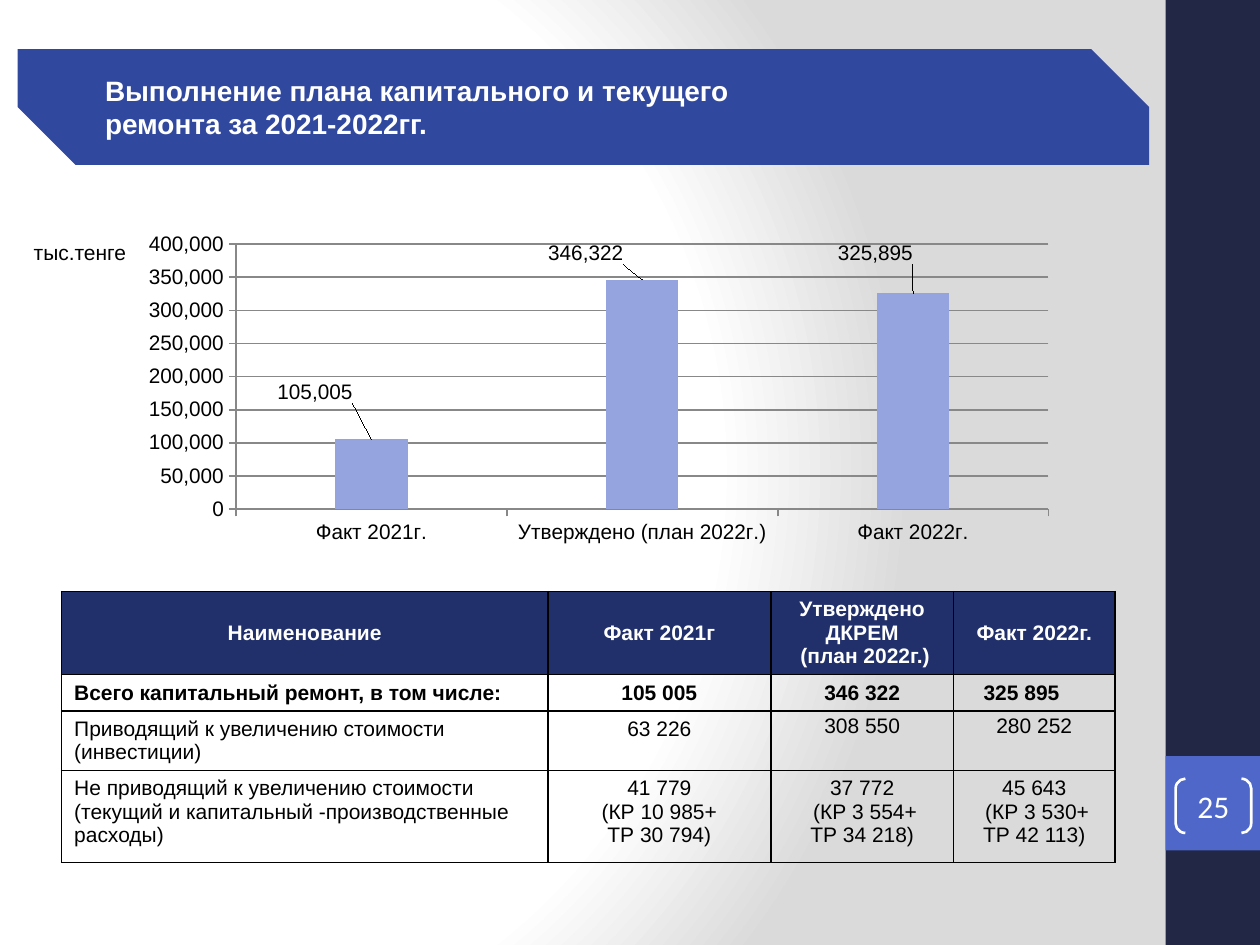
from dataclasses import dataclass

from lxml.etree import SubElement
from pptx import Presentation
from pptx.chart.data import CategoryChartData
from pptx.dml.color import RGBColor
from pptx.enum.chart import XL_CHART_TYPE as ChartType
from pptx.enum.chart import XL_LABEL_POSITION as LabelPosition
from pptx.enum.chart import XL_TICK_MARK as TickMark
from pptx.enum.shapes import MSO_SHAPE as Preset
from pptx.enum.text import MSO_ANCHOR as Anchor
from pptx.enum.text import MSO_AUTO_SIZE as AutoSize
from pptx.enum.text import PP_ALIGN as Align
from pptx.oxml import parse_xml
from pptx.oxml.ns import nsdecls, qn
from pptx.util import Pt

WHITE, BLACK, GREY = "FFFFFF", "000000", "888888"
NAVY, BLUE, BANNER, HEADER, BAR = "212745", "4E67C8", "31489F", "21306A", "95A4DE"


@dataclass
class Box:
    left: float
    top: float
    width: float
    height: float

    def lengths(self) -> tuple:
        return Pt(self.left), Pt(self.top), Pt(self.width), Pt(self.height)


@dataclass
class Style:
    size: float = 12
    color: str = BLACK
    bold: bool = False
    font: str = "Arial"
    align: Align = Align.LEFT


@dataclass
class Column:
    category: str
    value: int
    shift_x: float
    shift_y: float


def rgb(color: str) -> RGBColor:
    return RGBColor.from_string(color)


def write(frame, text: str, style: Style) -> None:
    """Fill a text frame, one paragraph for each line of text."""
    for index, line in enumerate(text.split("\n")):
        paragraph = frame.add_paragraph() if index else frame.paragraphs[0]
        paragraph.alignment = style.align
        run = paragraph.add_run()
        run.text = line
        set_font(run.font, style)


def set_font(font, style: Style) -> None:
    font.name, font.size, font.bold = style.font, Pt(style.size), style.bold
    font.color.rgb = rgb(style.color)


def set_margins(target, left: float, top: float, right: float, bottom: float) -> None:
    target.margin_left, target.margin_top = Pt(left), Pt(top)
    target.margin_right, target.margin_bottom = Pt(right), Pt(bottom)


def add_block(slide, preset: Preset, box: Box, fill: str):
    shape = slide.shapes.add_shape(preset, *box.lengths())
    shape.shadow.inherit = False
    shape.line.fill.background()
    shape.fill.solid()
    shape.fill.fore_color.rgb = rgb(fill)
    return shape


def add_layout(parent, index: int, **values) -> None:
    """Give a chart part a manual layout."""
    layout = parse_xml(f"<c:layout {nsdecls('c')}><c:manualLayout/></c:layout>")
    for tag, value in values.items():
        SubElement(layout[0], qn(f"c:{tag}")).set("val", str(value))
    for old in parent.findall(qn("c:layout")):
        parent.remove(old)
    parent.insert(index, layout)


def style_axis(axis) -> None:
    axis.major_tick_mark, axis.minor_tick_mark = TickMark.OUTSIDE, TickMark.NONE
    set_font(axis.tick_labels.font, Style())
    axis.format.line.color.rgb = rgb(GREY)
    axis.format.line.width = Pt(1)


def add_column_chart(slide, box: Box, columns: list[Column]) -> None:
    data = CategoryChartData(number_format="#,##0")
    data.categories = [column.category for column in columns]
    data.add_series("Series 1", [column.value for column in columns])
    frame = slide.shapes.add_chart(ChartType.COLUMN_CLUSTERED, *box.lengths(), data)
    chart = frame.chart
    chart.has_legend = chart.has_title = False
    set_font(chart.font, Style())

    style_axis(chart.category_axis)
    values = chart.value_axis
    style_axis(values)
    values.minimum_scale, values.maximum_scale, values.major_unit = 0, 400000, 50000
    values.tick_labels.number_format = "#,##0"
    values.tick_labels.number_format_is_linked = False
    values.major_gridlines.format.line.color.rgb = rgb(GREY)
    values.major_gridlines.format.line.width = Pt(1)

    plot = chart.plots[0]
    plot.gap_width, plot.vary_by_categories = 276, False
    series = plot.series[0]
    series.format.fill.solid()
    series.format.fill.fore_color.rgb = rgb(BAR)

    # Value labels, shifted up and to the left of their columns
    for index, column in enumerate(columns):
        label = series.points[index].data_label
        label.position = LabelPosition.OUTSIDE_END
        set_font(label.font, Style())
    for element, column in zip(chart.element.iter(qn("c:dLbl")), columns):
        add_layout(element, 1, x=column.shift_x, y=column.shift_y)
    add_layout(chart.element.find(f".//{qn('c:plotArea')}"), 0, layoutTarget="inner",
               xMode="edge", yMode="edge", x=0.082, y=0.03, w=0.862, h=0.763)


def add_borders(cell) -> None:
    properties = cell._tc.get_or_add_tcPr()
    for index, side in enumerate(("lnL", "lnR", "lnT", "lnB")):
        properties.insert(index, parse_xml(
            f'<a:{side} {nsdecls("a")} w="12700"><a:solidFill>'
            f'<a:srgbClr val="{BLACK}"/></a:solidFill></a:{side}>'))


def add_repair_table(slide, box: Box, widths: list, heights: list, rows: list) -> None:
    table = slide.shapes.add_table(len(rows), len(widths), *box.lengths()).table
    for column, width in zip(table.columns, widths):
        column.width = Pt(width)
    for r, texts in enumerate(rows):
        table.rows[r].height = Pt(heights[r])
        for c, text in enumerate(texts):
            cell = table.cell(r, c)
            header, total_fact = r == 0, (r, c) == (1, 3)
            left = total_fact or (c == 0 and not header)
            if header:
                cell.fill.solid()
                cell.fill.fore_color.rgb = rgb(HEADER)
                cell.vertical_anchor = Anchor.MIDDLE
            else:
                cell.fill.background()
            if total_fact:
                cell.margin_left = Pt(17.2)
            if r == 2 and c > 1:
                set_margins(cell, 7.2, 2.16, 7.2, 2.16)
            write(cell.text_frame, text, Style(
                color=WHITE if header else BLACK, bold=r < 2,
                align=Align.LEFT if left else Align.CENTER))
            add_borders(cell)


def set_background(slide) -> None:
    stops = "".join(f'<a:gs pos="{place}"><a:srgbClr val="{color}"/></a:gs>'
                    for place, color in ((0, WHITE), (75000, WHITE), (100000, "DADADA")))
    slide.background.fill.solid()
    properties = slide.element.find(f".//{qn('p:bgPr')}")
    properties.replace(properties[0], parse_xml(
        f'<a:gradFill {nsdecls("a")} rotWithShape="1"><a:gsLst>{stops}</a:gsLst>'
        '<a:path path="circle"><a:fillToRect l="20000" t="50000" r="100000" b="50000"/>'
        '</a:path></a:gradFill>'))


def main() -> None:
    presentation = Presentation()
    presentation.slide_width, presentation.slide_height = Pt(720), Pt(540)
    slide = presentation.slides.add_slide(presentation.slide_layouts[5])
    set_background(slide)

    # Side strip with the page number
    add_block(slide, Preset.RECTANGLE, Box(666, 0, 54, 540), NAVY)
    add_block(slide, Preset.RECTANGLE, Box(666, 432, 54, 54), BLUE)
    number = add_block(slide, Preset.DOUBLE_BRACKET, Box(671.8, 445, 43.2, 31), BLUE)
    number.adjustments[0] = 0.18
    number.fill.background()
    number.line.color.rgb = rgb(WHITE)
    number.line.width = Pt(1.5)
    set_margins(number.text_frame, 0, 0, 0, 0)
    number.text_frame.vertical_anchor = Anchor.MIDDLE
    write(number.text_frame, "25", Style(18, WHITE, font="Calibri", align=Align.CENTER))

    # Table
    add_repair_table(
        slide, Box(35.2, 338, 602, 140), [277.9, 127.4, 104.4, 92.3], [41, 16, 30, 52.5],
        [["Наименование", "Факт 2021г", "Утверждено ДКРЕМ\n (план 2022г.)", "Факт 2022г."],
         ["Всего капитальный ремонт, в том числе:", "105 005", "346 322", "325 895"],
         ["Приводящий к увеличению стоимости (инвестиции)", "63 226", "308 550", "280 252"],
         ["Не приводящий к увеличению стоимости "
          "(текущий и капитальный -производственные расходы)",
          "41 779\n(КР 10 985+\nТР 30 794)", "37 772\n (КР 3 554+\nТР 34 218)",
          "45 643\n (КР 3 530+\nТР 42 113)"]])

    # Chart and its unit
    add_column_chart(slide, Box(85, 133.2, 544.3, 198.7), [
        Column("Факт 2021г.", 105005, -0.06, -0.09),
        Column("Утверждено (план 2022г.)", 346322, -0.06, -0.03),
        Column("Факт 2022г.", 325895, -0.04, -0.07)])
    unit = slide.shapes.add_textbox(*Box(12.2, 133.2, 96.5, 21.6).lengths())
    unit.text_frame.word_wrap = True
    write(unit.text_frame, "тыс.тенге", Style())

    # Banner with the title on top
    banner_box = Box(10, 28, 646.6, 66.2)
    banner = add_block(slide, Preset.SNIP_2_DIAG_RECTANGLE, banner_box, BANNER)
    banner.adjustments[0], banner.adjustments[1] = 0, 0.5
    title = slide.shapes.title
    title.left, title.top, title.width, title.height = banner_box.lengths()
    title.text_frame.auto_size = AutoSize.NONE
    title.text_frame.vertical_anchor = Anchor.MIDDLE
    set_margins(title.text_frame, 50, 3, 5, 3)
    write(title.text_frame, "Выполнение плана капитального и текущего\nремонта за 2021-2022гг.",
          Style(16, WHITE, bold=True))
    slide.shapes._spTree.append(title.element)

    presentation.save("out.pptx")


if __name__ == "__main__":
    main()
